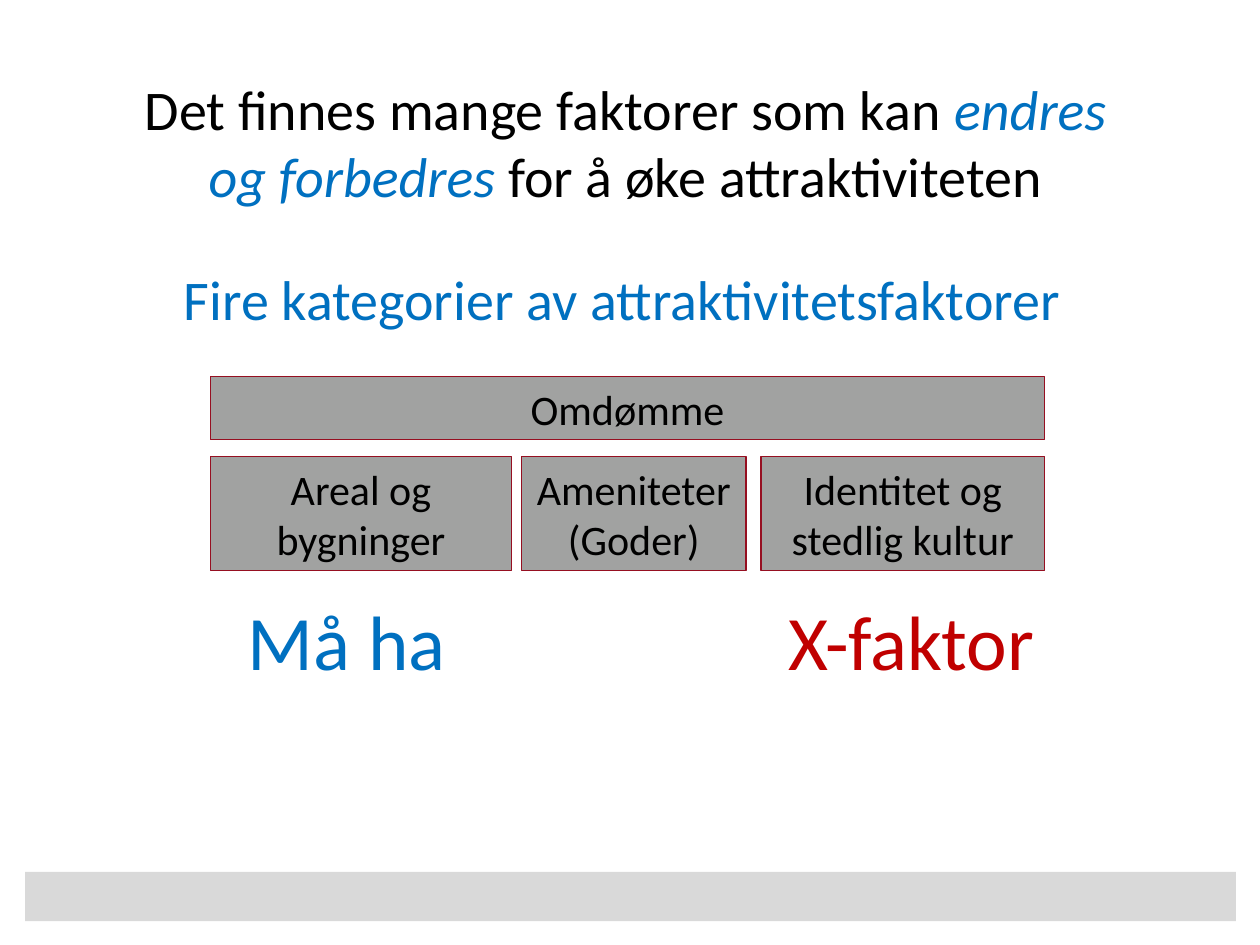
from dataclasses import dataclass

from pptx import Presentation
from pptx.dml.color import RGBColor
from pptx.enum.shapes import MSO_SHAPE
from pptx.enum.text import MSO_ANCHOR, MSO_AUTO_SIZE, PP_ALIGN
from pptx.util import Inches, Pt


@dataclass(frozen=True)
class Theme:
    """Colours and type sizes of the slide."""
    font: str = "Calibri"
    ink: str = "000000"
    blue: str = "0070C0"
    red: str = "C00000"
    box: str = "A1A2A1"
    edge: str = "960F21"
    band: str = "D9D9D9"
    label: int = 24
    heading: int = 32
    verdict: int = 44


THEME = Theme()


def place(sp, box):
    """Move a shape to a box given in inches."""
    sp.left, sp.top, sp.width, sp.height = (Inches(v) for v in box)


def style(r, size, color, italic=False):
    """Format one run."""
    r.font.name, r.font.size, r.font.italic = THEME.font, Pt(size), italic
    r.font.color.rgb = RGBColor.from_string(color)


def add_rect(slide, box, fill, edge=None):
    """Add a flat rectangle with an optional outline."""
    sp = slide.shapes.add_shape(MSO_SHAPE.RECTANGLE, *(Inches(v) for v in box))
    sp.shadow.inherit = False
    sp.fill.solid()
    sp.fill.fore_color.rgb = RGBColor.from_string(fill)
    if edge:
        sp.line.color.rgb = RGBColor.from_string(edge)
        sp.line.width = Pt(0.75)
    else:
        sp.line.fill.background()
    return sp


def add_factor(slide, box, text):
    """Add a labelled factor box."""
    tf = add_rect(slide, box, THEME.box, THEME.edge).text_frame
    tf.text = text
    tf.word_wrap = True
    for p in tf.paragraphs:
        p.alignment = PP_ALIGN.CENTER
        style(p.runs[0], THEME.label, THEME.ink)


def add_line(slide, box, text, size, color):
    """Add a line of coloured text."""
    tf = slide.shapes.add_textbox(*(Inches(v) for v in box)).text_frame
    tf.word_wrap = True
    tf.text = text
    style(tf.paragraphs[0].runs[0], size, color)


def add_title(slide, box):
    """Fill the title placeholder with its emphasised phrase."""
    sp = slide.shapes.title
    place(sp, box)
    tf = sp.text_frame
    tf.word_wrap, tf.auto_size = True, MSO_AUTO_SIZE.NONE
    tf.vertical_anchor = MSO_ANCHOR.TOP
    p = tf.paragraphs[0]
    p.alignment = PP_ALIGN.CENTER
    for text, color, italic in (
        ("Det finnes mange faktorer som kan ", THEME.ink, False),
        ("endres og forbedres ", THEME.blue, True),
        ("for å øke attraktiviteten", THEME.ink, False),
    ):
        r = p.add_run()
        r.text = text
        style(r, THEME.heading, color, italic)


def add_factors(slide, box):
    """Stack the reputation bar over the three factor boxes."""
    left, top, width, height = box
    bar, row = 0.325 * height, 0.59 * height
    add_factor(slide, (left, top, width, bar), "Omdømme")
    for start, share, text in (
        (0, 0.361, "Areal og bygninger"),
        (0.373, 0.269, "Ameniteter\n(Goder)"),
        (0.66, 0.34, "Identitet og stedlig kultur"),
    ):
        cell = (left + start * width, top + height - row, share * width, row)
        add_factor(slide, cell, text)


def add_verdicts(slide, box):
    """Set the two verdicts at the ends of the box."""
    left, top, width, height = box
    col = 0.354 * width
    add_line(slide, (left, top, col, height), "Må ha", THEME.verdict, THEME.blue)
    add_line(slide, (left + width - col, top, col, height), "X-faktor",
             THEME.verdict, THEME.red)


def main():
    """Build and save the slide."""
    prs = Presentation()
    prs.slide_width, prs.slide_height = Inches(10), Inches(7.5)
    slide = prs.slides.add_slide(prs.slide_layouts[5])
    add_rect(slide, (0.2, 6.92, 9.61, 0.39), THEME.band)
    add_factors(slide, (1.67, 2.99, 6.62, 1.54))
    add_line(slide, (1.36, 2.05, 7.24, 0.64),
             "Fire kategorier av attraktivitetsfaktorer", THEME.heading, THEME.blue)
    add_title(slide, (0.86, 0.54, 8.21, 1.18))
    add_verdicts(slide, (1.87, 4.66, 6.64, 0.84))
    prs.save("out.pptx")


if __name__ == "__main__":
    main()
